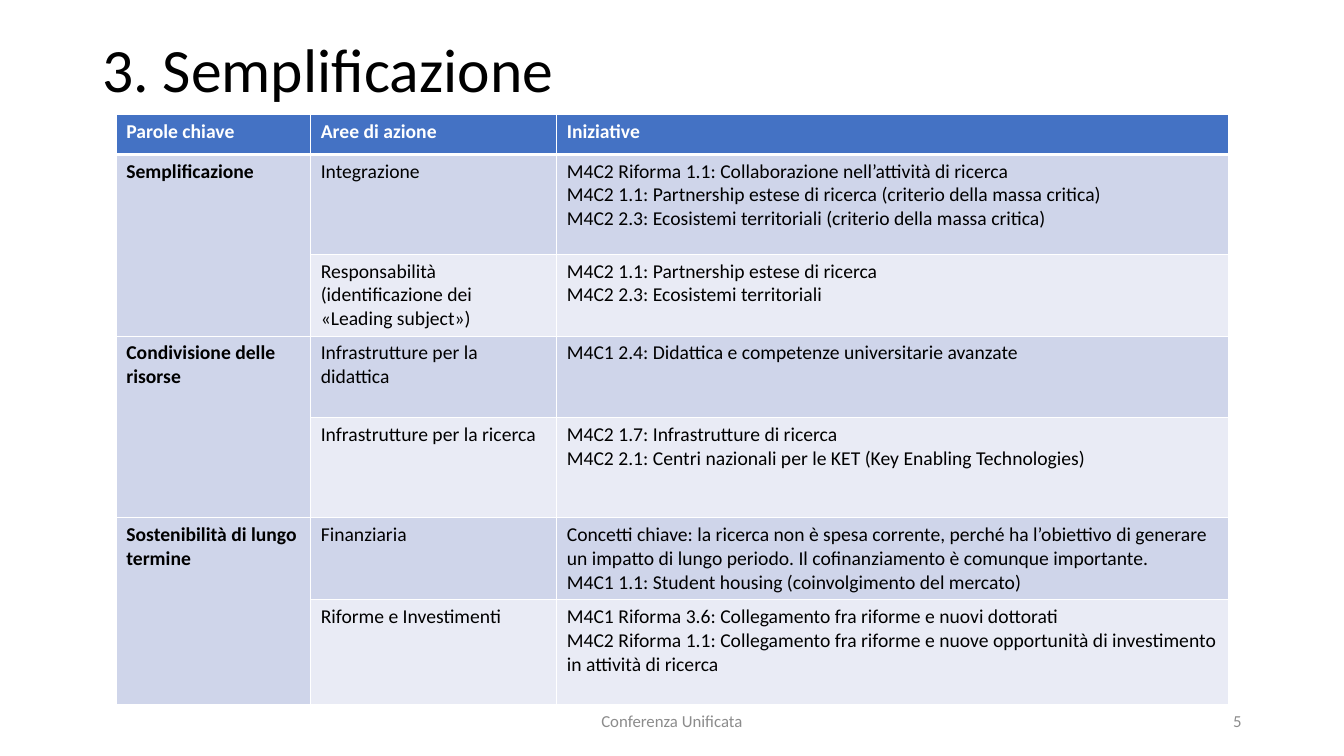
"""Build the slide on simplification: a title, a table of initiatives and a footer."""
import pptx
import pptx.dml.color
import pptx.enum.text
import pptx.oxml
import pptx.oxml.ns
import pptx.util

Cm = pptx.util.Cm
Pt = pptx.util.Pt
Align = pptx.enum.text.PP_ALIGN
Anchor = pptx.enum.text.MSO_ANCHOR


def color(code):
    return pptx.dml.color.RGBColor.from_string(code)


def style(frame, size, code, bold=False, align=Align.LEFT):
    for para in frame.paragraphs:
        para.alignment = align
        para.font.name = "Calibri"
        para.font.size = Pt(size)
        para.font.bold = bold
        para.font.color.rgb = color(code)


deck = pptx.Presentation()
deck.slide_width = Cm(33.87)
deck.slide_height = Cm(19.05)
slide = deck.slides.add_slide(deck.slide_layouts[6])

labels = [
    ("3. Semplificazione", 2.33, 0, 29.21, 3.68, 44, "000000", Align.LEFT),
    ("Conferenza Unificata", 11.22, 17.66, 11.43, 1.01, 12, "8C8C8C", Align.CENTER),
    ("5", 23.92, 17.66, 7.62, 1.01, 12, "8C8C8C", Align.RIGHT),
]
for text, left, top, width, height, size, code, align in labels:
    box = slide.shapes.add_textbox(Cm(left), Cm(top), Cm(width), Cm(height))
    frame = box.text_frame
    frame.word_wrap = True
    frame.vertical_anchor = Anchor.MIDDLE
    frame.text = text
    style(frame, size, code, align=align)
    if size == 44:
        frame.paragraphs[0].line_spacing = 0.9

rows = [
    ("Parole chiave", "Aree di azione", "Iniziative"),
    ("Semplificazione", "Integrazione",
     "M4C2 Riforma 1.1: Collaborazione nell’attività di ricerca\n"
     "M4C2 1.1: Partnership estese di ricerca (criterio della massa critica)\n"
     "M4C2 2.3: Ecosistemi territoriali (criterio della massa critica)"),
    ("", "Responsabilità (identificazione dei «Leading subject»)",
     "M4C2 1.1: Partnership estese di ricerca\n"
     "M4C2 2.3: Ecosistemi territoriali"),
    ("Condivisione delle risorse", "Infrastrutture per la didattica",
     "M4C1 2.4: Didattica e competenze universitarie avanzate"),
    ("", "Infrastrutture per la ricerca",
     "M4C2 1.7: Infrastrutture di ricerca\n"
     "M4C2 2.1: Centri nazionali per le KET (Key Enabling Technologies)"),
    ("Sostenibilità di lungo termine", "Finanziaria",
     "Concetti chiave: la ricerca non è spesa corrente, perché ha l’obiettivo di "
     "generare un impatto di lungo periodo. Il cofinanziamento è comunque importante.\n"
     "M4C1 1.1: Student housing (coinvolgimento del mercato)"),
    ("", "Riforme e Investimenti",
     "M4C1 Riforma 3.6: Collegamento fra riforme e nuovi dottorati\n"
     "M4C2 Riforma 1.1: Collegamento fra riforme e nuove opportunità di "
     "investimento in attività di ricerca"),
]
widths = [4.9, 6.2, 16.94]
heights = [1, 2.52, 2.06, 2.06, 2.52, 2.06, 2.65]
table = slide.shapes.add_table(
    len(rows), len(widths), Cm(2.93), Cm(2.89), Cm(sum(widths)), Cm(sum(heights))
).table
for column, width in zip(table.columns, widths):
    column.width = Cm(width)
for row, height in zip(table.rows, heights):
    row.height = Cm(height)

space = pptx.oxml.ns.nsdecls("a")
for i, texts in enumerate(rows):
    for j, text in enumerate(texts):
        cell = table.cell(i, j)
        cell.text = text
        head = i == 0
        style(cell.text_frame, 14, "FFFFFF" if head else "000000", head or j == 0)
        props = cell._tc.get_or_add_tcPr()
        for side in "LRTB":
            thick = (i, side) in [(0, "B"), (1, "T")]
            props.append(pptx.oxml.parse_xml(
                f'<a:ln{side} {space} w="{Pt(3 if thick else 1)}"><a:solidFill>'
                f'<a:srgbClr val="FFFFFF"/></a:solidFill></a:ln{side}>'))
        cell.fill.solid()
        band = "CFD5EA" if j == 0 or i % 2 else "E9EBF5"
        cell.fill.fore_color.rgb = color("4472C4" if head else band)

for i in range(1, len(rows), 2):
    table.cell(i, 0).merge(table.cell(i + 1, 0))

deck.save("out.pptx")
